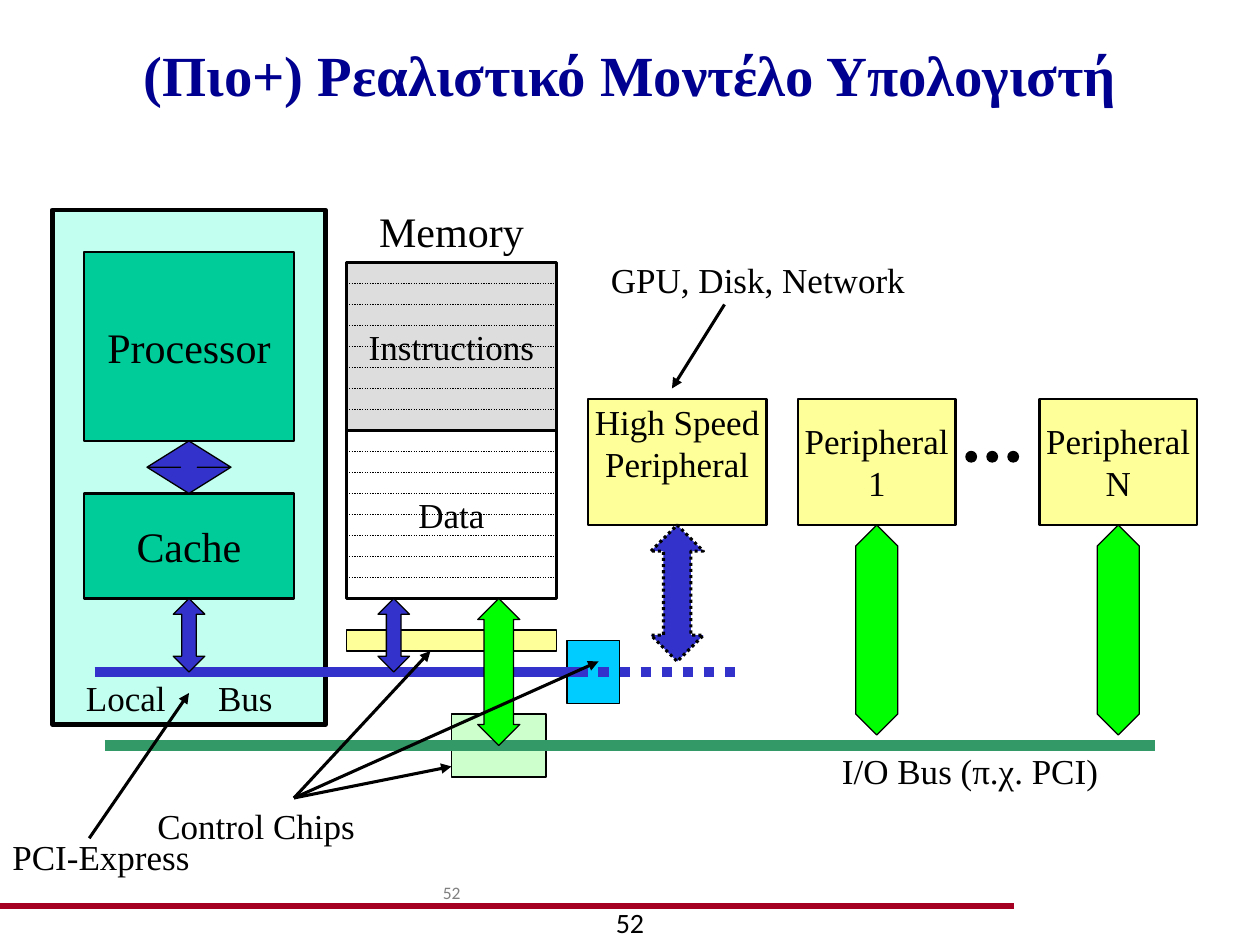
from lxml.etree import SubElement
from pptx import Presentation
from pptx.dml.color import RGBColor
from pptx.enum.dml import MSO_LINE
from pptx.enum.shapes import MSO_CONNECTOR, MSO_SHAPE
from pptx.enum.text import MSO_ANCHOR, PP_ALIGN
from pptx.oxml.ns import qn
from pptx.util import Pt

SERIF = "Times New Roman"
BLACK, BLUE, GREEN, YELLOW = "000000", "3333CC", "00FF00", "FFFF99"


def rgb(color):
    return RGBColor.from_string(color)


def write(tf, lines, size, color=BLACK, font=SERIF, align=PP_ALIGN.CENTER, bold=False):
    for i, line in enumerate(lines):
        p = tf.paragraphs[0] if i == 0 else tf.add_paragraph()
        p.alignment = align
        r = p.add_run()
        r.text = line
        r.font.size, r.font.name, r.font.bold = Pt(size), font, bold
        r.font.color.rgb = rgb(color)


def add_text(s, box, text, size, align=PP_ALIGN.LEFT, color=BLACK, font=SERIF):
    tf = s.shapes.add_textbox(*map(Pt, box)).text_frame
    tf.word_wrap = True
    write(tf, [text], size, color, font, align)
    return tf


def add_box(s, box, fill, width=1.5, lines=(), size=20, kind=MSO_SHAPE.RECTANGLE):
    sp = s.shapes.add_shape(kind, *map(Pt, box))
    sp.shadow.inherit = False
    sp.fill.solid()
    sp.fill.fore_color.rgb = rgb(fill)
    sp.line.color.rgb = rgb(BLACK)
    sp.line.width = Pt(width)
    if lines:
        sp.text_frame.word_wrap = False
        sp.text_frame.vertical_anchor = MSO_ANCHOR.MIDDLE
        write(sp.text_frame, lines, size)
    return sp


def add_line(s, start, end, color=BLACK, width=1.75, dotted=False, arrow=False):
    c = s.shapes.add_connector(MSO_CONNECTOR.STRAIGHT, *map(Pt, start + end))
    c.line.color.rgb = rgb(color)
    c.line.width = Pt(width)
    if dotted:
        c.line.dash_style = MSO_LINE.ROUND_DOT
    if arrow:
        SubElement(c.line._get_or_add_ln(), qn("a:tailEnd"), type="triangle")
    SubElement(c._element.spPr, qn("a:effectLst"))


def add_bus_arrow(s, center, top, width, height, fill):
    """Two-way arrow whose heads each take a fifth of its height."""
    sp = add_box(s, (center - width / 2, top, width, height), fill, 0.75,
                 kind=MSO_SHAPE.UP_DOWN_ARROW)
    sp.adjustments[0] = 0.5
    sp.adjustments[1] = 0.2 * height / min(width, height)
    return sp


def add_title(s, box, text):
    sp = s.shapes.title
    sp.left, sp.top, sp.width, sp.height = map(Pt, box)
    sp.text_frame.vertical_anchor = MSO_ANCHOR.MIDDLE
    write(sp.text_frame, [text], 32.4, "000090", bold=True)


def add_cpu(s, box):
    x, y, w, h = box
    add_box(s, box, "C2FFF0", 2.75)
    add_box(s, (x + 18, y + 24, 120, 108), "00CC99", lines=["Processor"], size=24)
    add_box(s, (x + 18, y + 162, 120, 60), "00CC99", lines=["Cache"], size=24)
    add_bus_arrow(s, x + 78, y + 132, 48, 30, BLUE)


def add_memory(s, box):
    x, y, w, h = box
    part, row = h / 2, h / 16
    add_text(s, (x, y - 36, w, 36), "Memory", 24, PP_ALIGN.CENTER)
    for i, (name, fill) in enumerate([("Instructions", "DDDDDD"), ("Data", "FFFFFF")]):
        top = y + i * part
        add_box(s, (x, top, w, part), fill)
        for k in range(1, 8):
            add_line(s, (x, top + k * row), (x + w, top + k * row), width=0.75, dotted=True)
        add_text(s, (x, top + 32.5, w, 31), name, 20, PP_ALIGN.CENTER)


def add_control_chips(s):
    for box, fill in [((198, 360, 120, 12), YELLOW),
                      ((324, 366, 30, 36), "00CCFF"),
                      ((258, 408, 54, 36), "CCFFCC")]:
        add_box(s, box, fill, 0.75)


def add_peripherals(s, box):
    x, y, w, h = box
    sp = add_box(s, (x, y, 102, h), YELLOW, lines=["High Speed", "Peripheral"])
    sp.text_frame.vertical_anchor = MSO_ANCHOR.TOP
    sp.text_frame.margin_top = Pt(1)
    for left, number in [(x + 120, "1"), (x + w - 90, "N")]:
        add_box(s, (left, y, 90, h), YELLOW, lines=["Peripheral", number])
    for i in range(3):
        add_box(s, (x + 216 + 12 * i, y + 30, 6, 6), BLACK, 0.75, kind=MSO_SHAPE.OVAL)


def add_buses(s, local_y, io_y):
    add_line(s, (54, local_y), (336, local_y), BLUE, 6)
    add_line(s, (60, io_y), (660, io_y), "339966", 6)
    add_line(s, (330, local_y), (426, local_y), BLUE, 6, dotted=True)
    add_bus_arrow(s, 285, 342, 24, 84, GREEN)
    for center in (108, 225):
        add_bus_arrow(s, center, 342, 18, 42, BLUE)
    for center in (501, 639):
        add_bus_arrow(s, center, 300, 24, 120, GREEN)
    fast = add_bus_arrow(s, 387, 300, 30, 78, BLUE)
    fast.line.width = Pt(1.75)
    fast.line.dash_style = MSO_LINE.ROUND_DOT
    add_text(s, (474, 425, 162, 31), "I/O Bus (π.χ. PCI)", 20)
    tf = add_text(s, (42, 383, 126, 31), "Local\tBus", 20)
    tabs = SubElement(tf.paragraphs[0]._p.get_or_add_pPr(), qn("a:tabLst"))
    SubElement(tabs, qn("a:tab"), pos=str(Pt(75.5)), algn="l")


def add_callouts(s):
    for tip in [(246, 372), (342, 378), (258, 438)]:
        add_line(s, (168, 456), tip, arrow=True)
    add_text(s, (72, 456, 138, 31), "Control Chips", 20, PP_ALIGN.RIGHT)
    add_line(s, (51, 479), (108, 396), arrow=True)
    add_text(s, (0, 474, 144, 31), "PCI-Express", 20)
    add_line(s, (414, 174), (384, 222), arrow=True)
    add_text(s, (342, 144, 198, 31), "GPU, Disk, Network", 20)


def add_footer(s, box):
    x, y, w, h = box
    add_text(s, (x, y, w, h), "52", 10, color="808080", font="Calibri")
    add_text(s, (x, y + 13.7, w, h), "52", 16, PP_ALIGN.CENTER, font="Calibri")


def main():
    prs = Presentation()
    prs.slide_width, prs.slide_height = Pt(720), Pt(540)
    s = prs.slides.add_slide(prs.slide_layouts[5])
    add_line(s, (0, 517.7), (579.6, 517.7), "A50021", 3)
    add_title(s, (27, 18, 666, 48), "(Πιο+) Ρεαλιστικό Μοντέλο Υπολογιστή")
    add_cpu(s, (30, 120, 156, 294))
    add_memory(s, (198, 150, 120, 192))
    add_control_chips(s)
    add_peripherals(s, (336, 228, 348, 72))
    add_buses(s, 384, 426)
    add_callouts(s)
    add_footer(s, (246, 500.4, 228, 29))
    prs.save("out.pptx")


if __name__ == "__main__":
    main()
